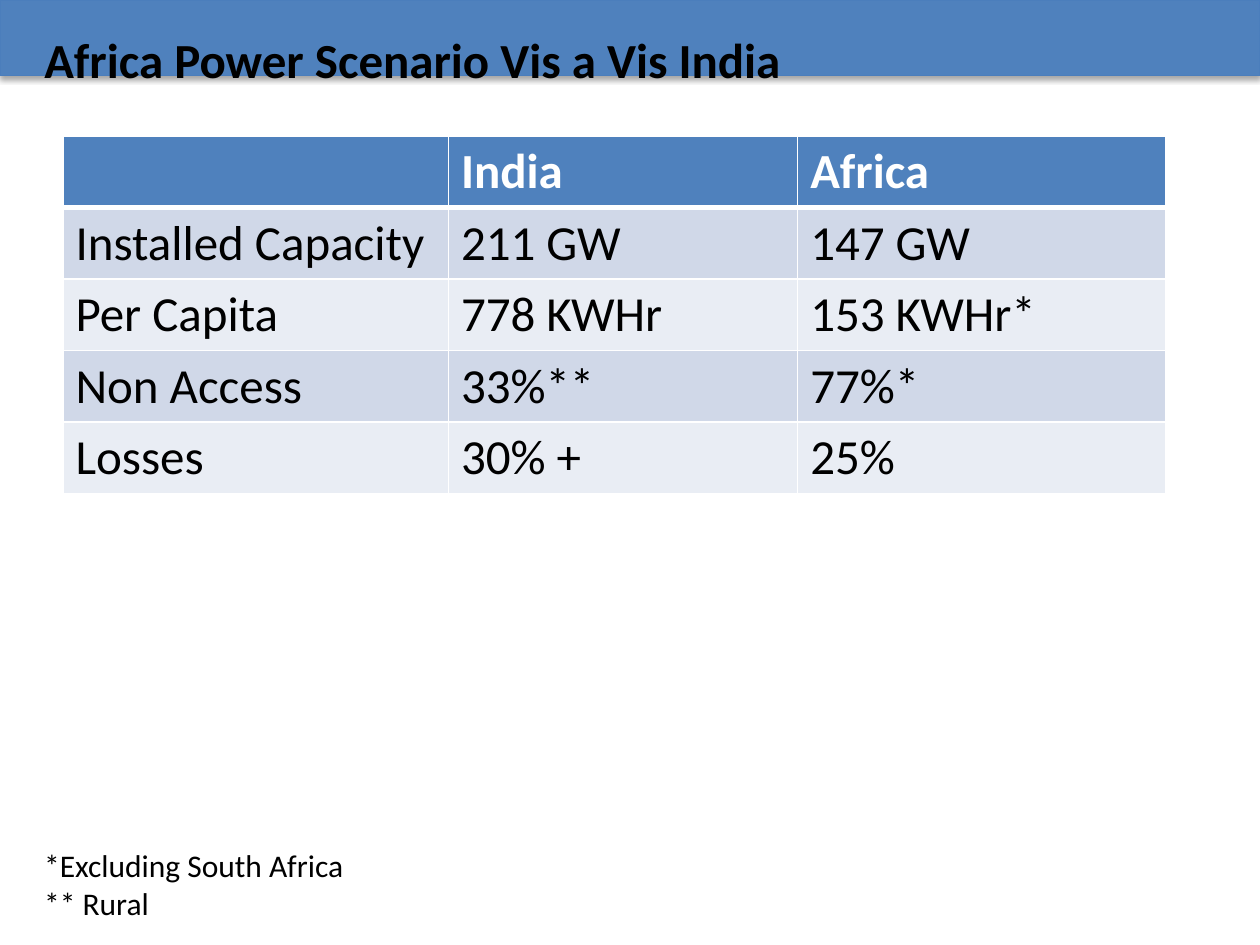
from lxml import etree
from pptx import Presentation
from pptx import util as u
from pptx.dml.color import RGBColor
from pptx.enum import shapes, text
from pptx.oxml import parse_xml
from pptx.oxml.ns import nsdecls, qn

COLORS = {
    "bar": "4F81BD", "bar_line": "4B7EBC", "black": "000000",
    "white": "FFFFFF", "band_dark": "D0D8E8", "band_light": "E9EDF4",
}
ROWS = [
    ["", "India", "Africa"],
    ["Installed Capacity", "211 GW", "147 GW"],
    ["Per Capita", "778 KWHr", "153 KWHr*"],
    ["Non Access", "33%**", "77%*"],
    ["Losses", "30% +", "25%"],
]
COL_WIDTHS = [7.77, 7.04, 7.42]
ROW_HEIGHT = 1.44


def rgb(name):
    return RGBColor.from_string(COLORS[name])


class SlideBuilder:
    font = "Calibri"

    def __init__(self, prs):
        self.slide = prs.slides.add_slide(prs.slide_layouts[5])

    def place(self, sp, left, top, width, height):
        sp.left, sp.top = u.Cm(left), u.Cm(top)
        sp.width, sp.height = u.Cm(width), u.Cm(height)

    def add_run(self, p, words, size, color="black", bold=False):
        r = p.add_run()
        r.text = words
        r.font.name, r.font.size, r.font.bold = self.font, u.Pt(size), bold
        r.font.color.rgb = rgb(color)

    def fill_text(self, sp, lines, size, bold=False):
        tf = sp.text_frame
        tf.word_wrap = True
        tf.auto_size = text.MSO_AUTO_SIZE.SHAPE_TO_FIT_TEXT
        tf.vertical_anchor = text.MSO_ANCHOR.TOP
        for i, line in enumerate(lines):
            p = tf.add_paragraph() if i else tf.paragraphs[0]
            p.alignment = text.PP_ALIGN.LEFT
            self.add_run(p, line, size, bold=bold)

    def title(self, words, box, size):
        sp = self.slide.shapes.title
        self.place(sp, *box)
        self.fill_text(sp, [words], size, bold=True)

    def textbox(self, lines, box, size):
        sp = self.slide.shapes.add_textbox(*map(u.Cm, box))
        self.fill_text(sp, lines, size)

    def bar(self, box):
        sp = self.slide.shapes.add_shape(
            shapes.MSO_SHAPE.RECTANGLE, *map(u.Cm, box))
        sp.fill.solid()
        sp.fill.fore_color.rgb = rgb("bar")
        sp.line.color.rgb = rgb("bar_line")
        sp.line.width = u.Pt(0.75)
        # Soft shadow below the bar
        sp.shadow.inherit = False
        effects = sp._element.spPr.find(qn("a:effectLst"))
        effects.append(parse_xml(
            f'<a:outerShdw {nsdecls("a")} blurRad="{u.Pt(3.1)}" dist="{u.Pt(1.8)}" '
            f'dir="5400000" rotWithShape="0"><a:srgbClr val="{COLORS["black"]}">'
            '<a:alpha val="35000"/></a:srgbClr></a:outerShdw>'))
        # Send behind the title
        self.slide.shapes.title._element.addprevious(sp._element)

    def borders(self, cell, widths):
        tc_pr = cell._tc.get_or_add_tcPr()
        for i, (side, width) in enumerate(widths.items()):
            ln = etree.Element(qn(f"a:ln{side}"), w=str(u.Pt(width)))
            fill = etree.SubElement(ln, qn("a:solidFill"))
            etree.SubElement(fill, qn("a:srgbClr"), val=COLORS["white"])
            tc_pr.insert(i, ln)

    def table(self, rows, left, top, col_widths, row_height, size):
        table = self.slide.shapes.add_table(
            len(rows), len(col_widths), u.Cm(left), u.Cm(top),
            u.Cm(sum(col_widths)), u.Cm(row_height * len(rows))).table
        for column, width in zip(table.columns, col_widths):
            column.width = u.Cm(width)
        for i, row in enumerate(rows):
            table.rows[i].height = u.Cm(row_height)
            header = i == 0
            band = "bar" if header else "band_dark" if i % 2 else "band_light"
            for j, words in enumerate(row):
                cell = table.cell(i, j)
                cell.fill.solid()
                cell.fill.fore_color.rgb = rgb(band)
                self.borders(cell, {"L": 1, "R": 1, "T": 3 if i == 1 else 1,
                                    "B": 3 if header else 1})
                if words:
                    self.add_run(cell.text_frame.paragraphs[0], words, size,
                                 "white" if header else "black", header)


def main():
    prs = Presentation()
    prs.slide_width, prs.slide_height = u.Cm(25.4), u.Cm(19.05)
    s = SlideBuilder(prs)

    # Heading
    s.bar((0, 0, 25.4, 1.52))
    s.title("Africa Power Scenario Vis a Vis India", (0.64, 0.46, 16.71, 1.45), 28)

    # Comparison table
    s.table(ROWS, 1.27, 2.74, COL_WIDTHS, ROW_HEIGHT, 28)

    # Footnotes
    s.textbox(["*Excluding South Africa", "** Rural"], (0.64, 16.94, 7.82, 1.8), 18)

    prs.save("out.pptx")


if __name__ == "__main__":
    main()
